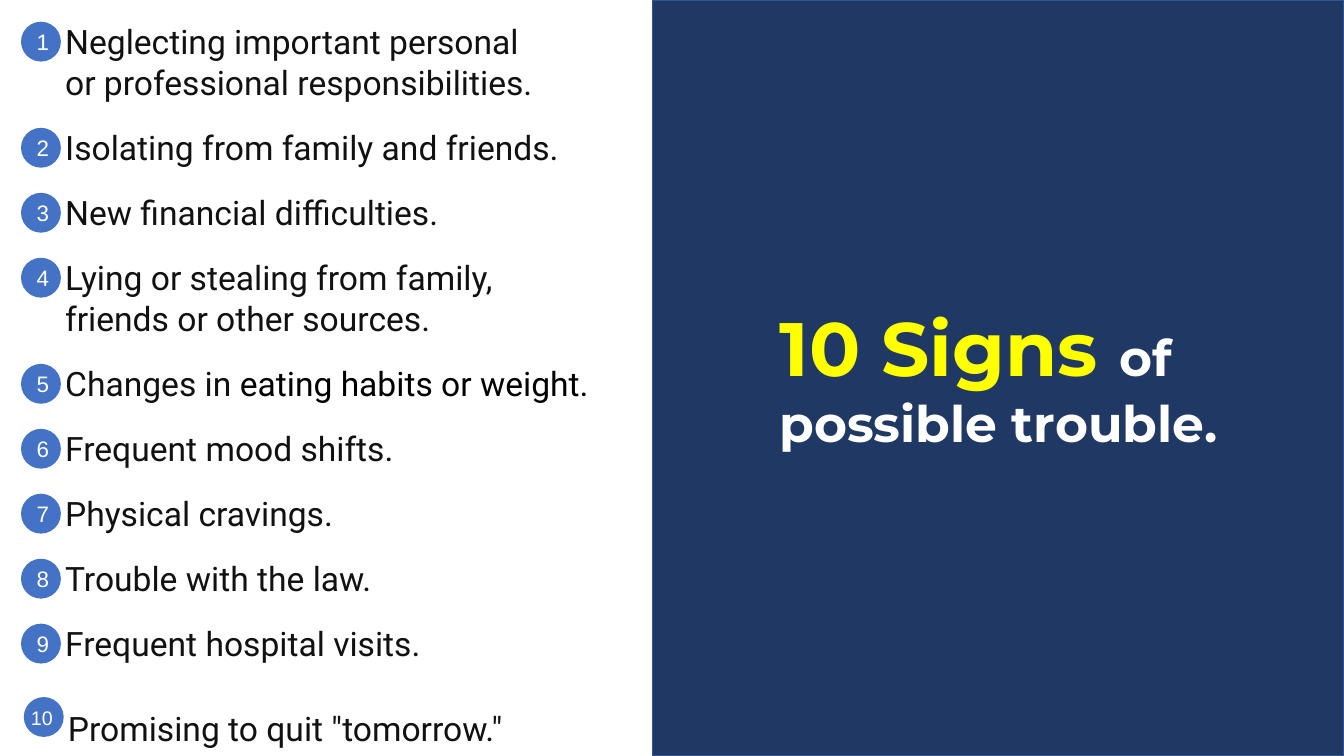
from pptx import Presentation
from pptx.dml.color import RGBColor
from pptx.enum.shapes import MSO_SHAPE
from pptx.enum.text import MSO_ANCHOR, MSO_AUTO_SIZE, PP_ALIGN
from pptx.util import Pt

INK = "111111"
WHITE = "FFFFFF"
BLUE = "4472C4"
NAVY = "203864"
SIGNS = [
    [("Neglecting important personal or professional responsibilities.", INK)],
    [("Isolating from family and friends.", INK)],
    [("New financial difficulties.", INK)],
    [("Lying or stealing from family, friends or other sources.", INK)],
    [("Changes in ", INK), ("eating habits or weight.", "000000")],
    [("Frequent mood shifts.", INK)],
    [("Physical cravings.", INK)],
    [("Trouble with the law.", INK)],
    [("Frequent hospital visits.", INK)],
    [('Promising to quit "tomorrow."', INK)],
]
TWO_LINE_SIGNS = {1, 4}
WIDE_SIGNS = {2: 397, 5: 408}


def color(value):
    """Turn a hex string into a colour."""
    return RGBColor.from_string(value)


def add_run(paragraph, text, font, size, ink, bold=False):
    """Append a formatted run to a paragraph."""
    run = paragraph.add_run()
    run.text = text
    run.font.name = font
    run.font.size = Pt(size)
    run.font.bold = bold
    run.font.color.rgb = color(ink)


def add_shape(shapes, preset, left, top, width, height, fill, outline=None):
    """Add a flat preset shape with an optional outline."""
    shape = shapes.add_shape(preset, Pt(left), Pt(top), Pt(width), Pt(height))
    shape.shadow.inherit = False
    shape.fill.solid()
    shape.fill.fore_color.rgb = color(fill)
    if outline:
        shape.line.color.rgb = color(outline)
        shape.line.width = Pt(1)
    else:
        shape.line.fill.background()
    return shape


def add_label(shapes, left, top, width, height, wrap=True):
    """Add a text box and return its first paragraph."""
    label = shapes.add_textbox(Pt(left), Pt(top), Pt(width), Pt(height))
    label.text_frame.word_wrap = wrap
    label.text_frame.auto_size = MSO_AUTO_SIZE.SHAPE_TO_FIT_TEXT
    return label.text_frame.paragraphs[0]


def add_sign(slide, number, parts, top, height):
    """Add one numbered sign as a group of wording and badge."""
    last = number == len(SIGNS)
    shift = 2 if last else 0
    shapes = slide.shapes.add_group_shape().shapes
    wording = add_label(shapes, 39.5 + shift, top, WIDE_SIGNS.get(number, 363), height)
    for text, ink in parts:
        add_run(wording, text, "Roboto", 24, ink)
    badge_top = top + (10 if last else 4)
    badge = add_shape(shapes, MSO_SHAPE.OVAL, 15 + shift, badge_top, 28.5, 28.5, BLUE)
    if last:
        wording.line_spacing = 1.5
        numeral = add_label(shapes, 15, badge_top + 3, 30, 24.5, wrap=False)
        add_run(numeral, str(number), "Arial", 14, WHITE)
    else:
        badge.text_frame.vertical_anchor = MSO_ANCHOR.MIDDLE
        numeral = badge.text_frame.paragraphs[0]
        numeral.alignment = PP_ALIGN.CENTER
        add_run(numeral, str(number), "Arial", 16, WHITE)


def add_signs(slide):
    """Stack the signs down the left half."""
    top = 11.5
    for number, parts in enumerate(SIGNS, start=1):
        two_lines = number in TWO_LINE_SIGNS
        last = number == len(SIGNS)
        height = 46 if last else 65.5 if two_lines else 36
        add_sign(slide, number, parts, top, height)
        top += 75.8 if two_lines else 46.4


def add_heading(slide):
    """Fill the title placeholder over the navy panel."""
    panel = add_shape(slide.shapes, MSO_SHAPE.RECTANGLE, 466, 0, 494, 540, NAVY, "325491")
    slide.shapes._spTree.insert(2, panel._element)
    title = slide.shapes.title
    title.left, title.top = Pt(549.5), Pt(211.5)
    title.width, title.height = Pt(360), Pt(117)
    title.text_frame.word_wrap = True
    title.text_frame.auto_size = MSO_AUTO_SIZE.NONE
    title.text_frame.vertical_anchor = MSO_ANCHOR.TOP
    heading = title.text_frame.paragraphs[0]
    heading.alignment = PP_ALIGN.LEFT
    add_run(heading, "10 Signs ", "Montserrat", 54, "FFFF00", bold=True)
    add_run(heading, "of possible trouble.", "Montserrat", 36, WHITE, bold=True)


def main():
    """Build and save the slide."""
    deck = Presentation()
    deck.slide_width, deck.slide_height = Pt(960), Pt(540)
    slide = deck.slides.add_slide(deck.slide_layouts[5])
    add_heading(slide)
    add_signs(slide)
    deck.save("out.pptx")


if __name__ == "__main__":
    main()
